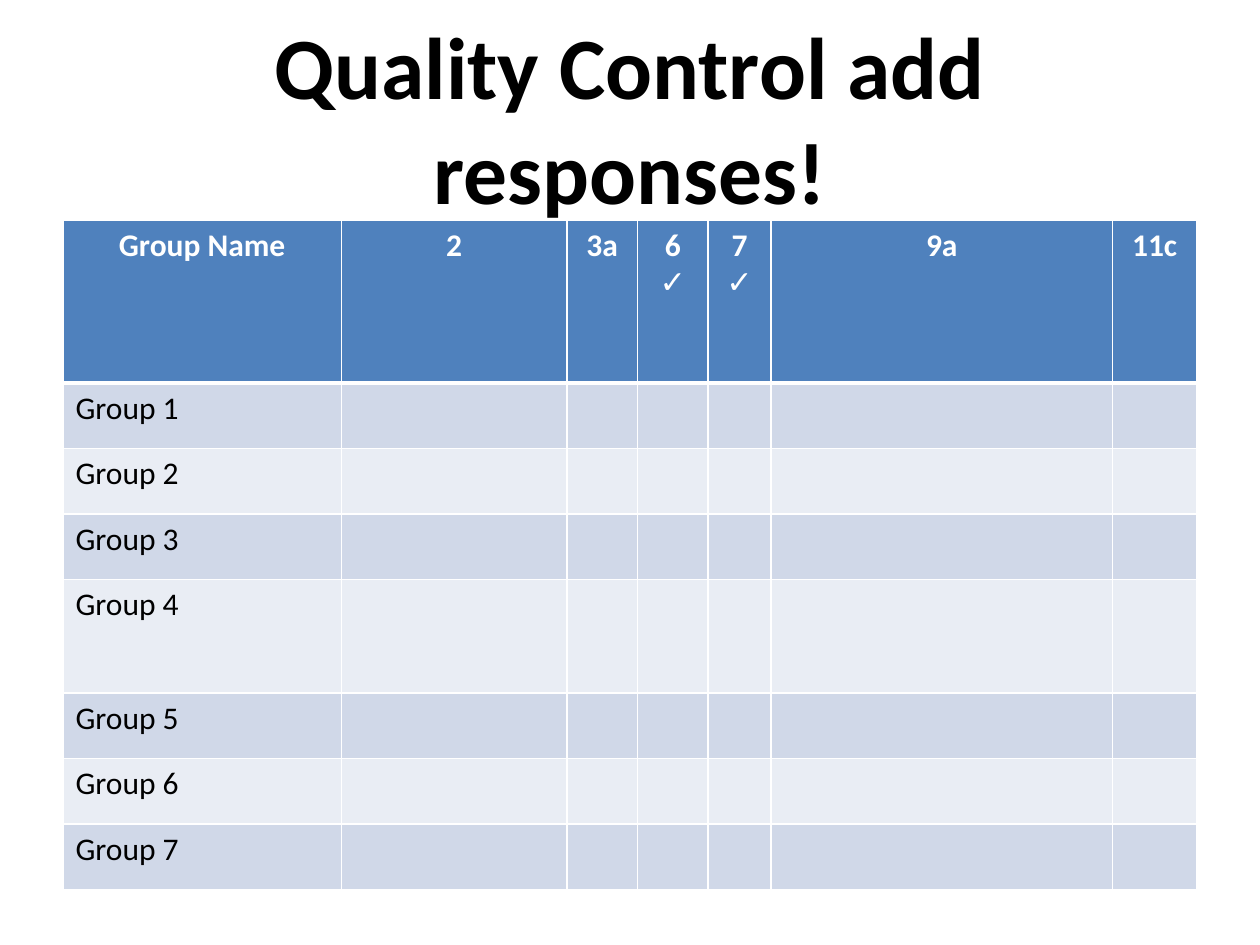
from pptx import Presentation
from pptx.dml.color import RGBColor
from pptx.enum.text import MSO_ANCHOR as Anchor, PP_ALIGN as Align
from pptx.oxml import parse_xml
from pptx.oxml.ns import nsdecls
from pptx.util import Pt

SCALE = 9144
COLORS = {"header": "4F81BD", "odd": "D0D8E8", "even": "E9EDF4",
          "white": "FFFFFF", "black": "000000"}
TITLE = {"size": Pt(50), "bold": True, "name": "Calibri"}
HEADER = {"size": Pt(18), "bold": True, "name": "Calibri"}
BODY = {"size": Pt(18), "bold": False, "name": "Calibri"}
CHECK = {"size": Pt(18), "bold": True, "name": "Arial"}


def add_run(paragraph, text, style, color):
    run = paragraph.add_run()
    run.text = text
    for name, value in style.items():
        setattr(run.font, name, value)
    run.font.color.rgb = RGBColor.from_string(COLORS[color])


def style_cell(cell, fill, bottom_width):
    properties = cell._tc.get_or_add_tcPr()
    for side, width in {"L": 1, "R": 1, "T": 1, "B": bottom_width}.items():
        properties.append(parse_xml(
            f'<a:ln{side} {nsdecls("a")} w="{Pt(width)}"><a:solidFill>'
            f'<a:srgbClr val="{COLORS["white"]}"/></a:solidFill></a:ln{side}>'))
    cell.fill.solid()
    cell.fill.fore_color.rgb = RGBColor.from_string(COLORS[fill])


presentation = Presentation()
presentation.slide_width = 1000 * SCALE
presentation.slide_height = 750 * SCALE
slide = presentation.slides.add_slide(presentation.slide_layouts[6])

title = slide.shapes.add_textbox(*(px * SCALE for px in (50, 30, 900, 125)))
title.text_frame.word_wrap = True
title.text_frame.vertical_anchor = Anchor.MIDDLE
paragraph = title.text_frame.paragraphs[0]
paragraph.alignment = Align.CENTER
add_run(paragraph, "Quality Control add responses!", TITLE, "black")

columns = [221, 179, 56, 56, 50, 271, 67]
rows = [129, 52, 52, 52, 90, 52, 52, 52]
headings = ["Group Name", "2", "3a", "6", "7", "9a", "11c"]
checked = ["6", "7"]

table = slide.shapes.add_table(
    len(rows), len(columns),
    *(px * SCALE for px in (50, 175, sum(columns), sum(rows)))).table
for column, width in zip(table.columns, columns):
    column.width = width * SCALE
for row, height in zip(table.rows, rows):
    row.height = height * SCALE

for row_index, row in enumerate(table.rows):
    fill = "header" if row_index == 0 else "odd" if row_index % 2 else "even"
    for cell in row.cells:
        style_cell(cell, fill, 3 if row_index == 0 else 1)

for column_index, heading in enumerate(headings):
    frame = table.cell(0, column_index).text_frame
    paragraph = frame.paragraphs[0]
    paragraph.alignment = Align.CENTER
    add_run(paragraph, heading, HEADER, "white")
    if heading in checked:
        paragraph = frame.add_paragraph()
        paragraph.alignment = Align.CENTER
        add_run(paragraph, "✓", CHECK, "white")

for number in range(1, len(rows)):
    paragraph = table.cell(number, 0).text_frame.paragraphs[0]
    add_run(paragraph, f"Group {number}", BODY, "black")

presentation.save("out.pptx")
